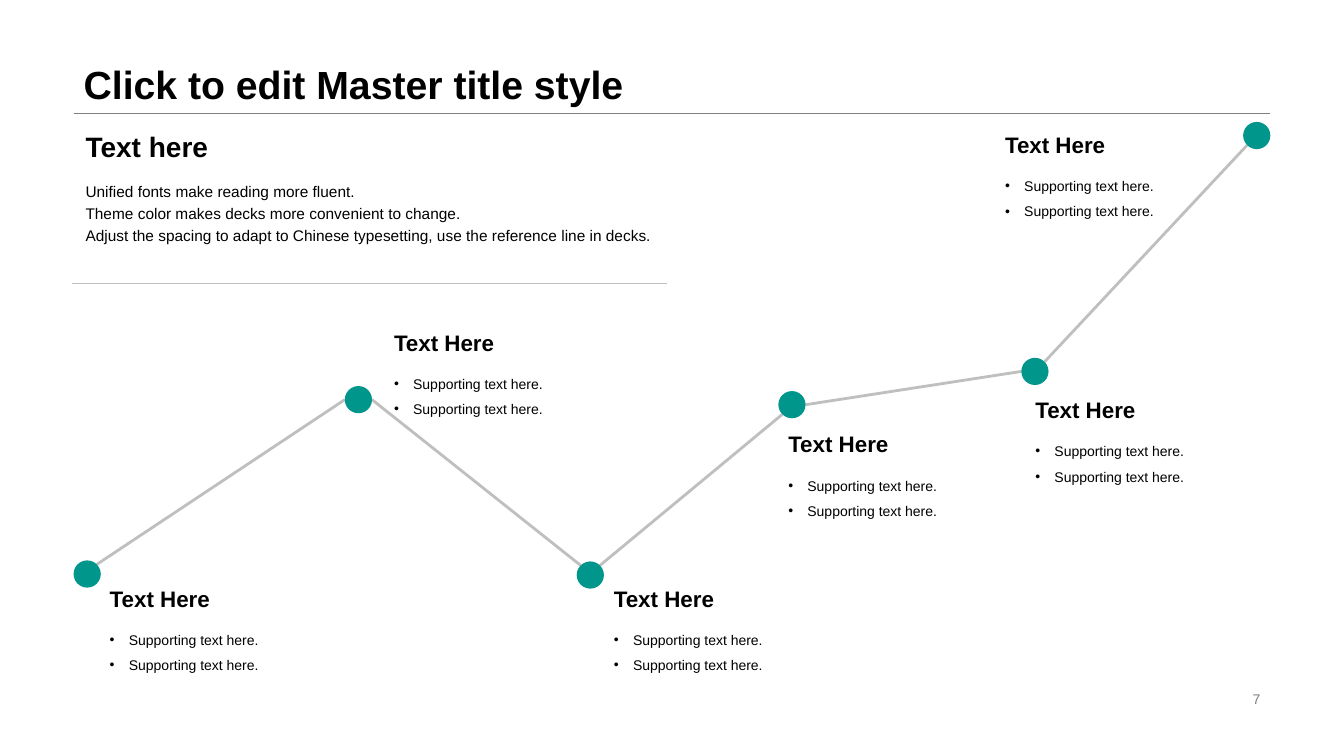
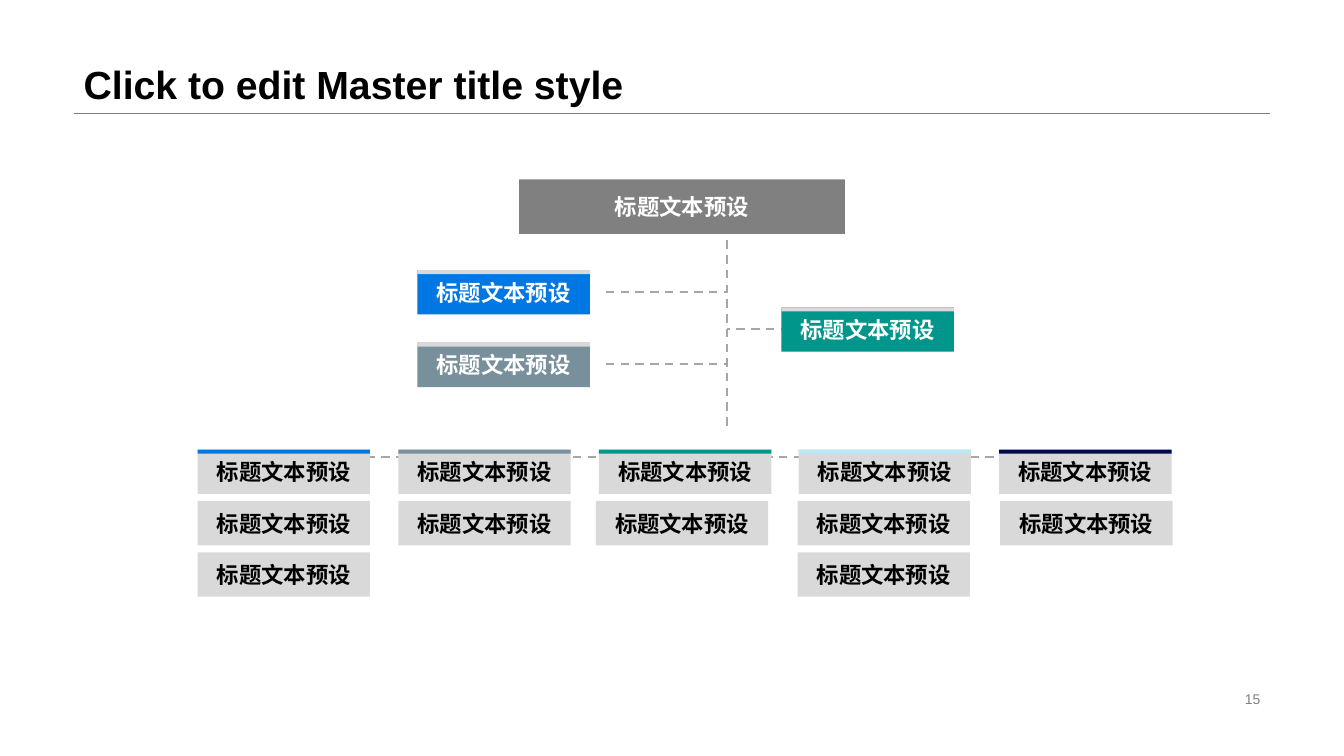
from math import sqrt

from lxml import etree
from pptx import Presentation
from pptx import util as u
from pptx.dml.color import RGBColor
from pptx.enum import dml, shapes, text
from pptx.oxml import ns

EMU_PER_PX = 9144  # 100 px to the inch
FONT = "Arial"
COLORS = {
    "black": "000000", "white": "FFFFFF", "gray": "808080",
    "dash": "A6A6A6", "rule": "BFBFBF", "panel": "D9D9D9",
    "blue": "0077E2", "slate": "78909C", "teal": "00968C",
    "sky": "B9E8F6", "navy": "000A4C",
}
LEFT, RIGHT, CENTER = text.PP_ALIGN.LEFT, text.PP_ALIGN.RIGHT, text.PP_ALIGN.CENTER
TOP, MIDDLE, BOTTOM = text.MSO_ANCHOR.TOP, text.MSO_ANCHOR.MIDDLE, text.MSO_ANCHOR.BOTTOM

MARGIN, CONTENT_WIDTH = 73, 1187
TITLE = "Click to edit Master title style"

DOT_SIZE = 27
# Dot and label offsets within the trend region
MILESTONES = [
    ((0, 435), (26, 453)),
    ((269, 262), (308, 199)),
    ((499, 436), (526, 453)),
    ((699, 267), (699, 300)),
    ((940, 234), (944, 266)),
    ((1160, 0), (914, 3)),
]
# Sides of the dots at which each trend line starts and ends
TREND_ENDS = [
    ("top right", "left"),
    ("right", "top left"),
    ("top right", "bottom left"),
    ("right", "left"),
    ("top right", "bottom left"),
]

UNIT = "标题文本预设"
UNIT_WIDTH, UNIT_HEIGHT, ACCENT_HEIGHT = 171, 44, 4
# Accent colour, number of lower units, their sideways shift
BRANCHES = [
    ("blue", 2, 0), ("slate", 1, 0), ("teal", 1, -3), ("sky", 2, -1), ("navy", 1, 1),
]


def px(length):
    return u.Emu(round(length * EMU_PER_PX))


def rgb(color):
    return RGBColor.from_string(COLORS[color])


def write(frame, lines, size, color="black", bold=False, align=LEFT,
          anchor=TOP, spacing=1.0):
    frame.word_wrap = True
    frame.auto_size = text.MSO_AUTO_SIZE.NONE
    frame.vertical_anchor = anchor
    frame.text = "\n".join(lines)
    for para in frame.paragraphs:
        para.alignment = align
        para.line_spacing = spacing
        for span in para.runs:
            span.font.name = FONT
            span.font.size = u.Pt(size)
            span.font.bold = bold
            span.font.color.rgb = rgb(color)


def add_text(page, left, top, width, height, lines, size, **style):
    box = page.shapes.add_textbox(px(left), px(top), px(width), px(height))
    write(box.text_frame, lines, size, **style)
    return box


def add_bullets(frame, indent):
    for para in frame.paragraphs:
        properties = para._p.get_or_add_pPr()
        properties.set("marL", str(px(indent)))
        properties.set("indent", str(-px(indent)))
        etree.SubElement(properties, ns.qn("a:buFont")).set("typeface", FONT)
        etree.SubElement(properties, ns.qn("a:buChar")).set("char", "•")


def add_filled(page, kind, left, top, width, height, color):
    shape = page.shapes.add_shape(kind, px(left), px(top), px(width), px(height))
    shape.shadow.inherit = False
    shape.fill.solid()
    shape.fill.fore_color.rgb = rgb(color)
    shape.line.fill.background()
    return shape


def add_line(page, start, end, color, weight, dashed=False):
    line = page.shapes.add_connector(
        shapes.MSO_CONNECTOR.STRAIGHT, *(px(value) for value in (*start, *end)))
    line.line.color.rgb = rgb(color)
    line.line.width = u.Pt(weight)
    if dashed:
        line.line.dash_style = dml.MSO_LINE.DASH
    etree.SubElement(line._element.spPr, ns.qn("a:effectLst"))


def add_page(deck, number):
    """Add a slide with the shared title, rule and page number."""
    page = deck.slides.add_slide(deck.slide_layouts[5])
    title = page.shapes.title
    title.left, title.top = px(MARGIN), px(0)
    title.width, title.height = px(CONTENT_WIDTH), px(112)
    write(title.text_frame, [TITLE], 28, bold=True, anchor=BOTTOM, spacing=0.9)
    right = MARGIN + CONTENT_WIDTH
    add_line(page, (MARGIN, 112), (right, 112), "gray", 0.25)
    add_text(page, right - 318, 682, 318, 23, [str(number)], 10,
             color="gray", align=RIGHT, anchor=MIDDLE)
    return page


def add_intro(page, left, top, width):
    add_text(page, left, top, width, 48, ["Text here"], 20, bold=True)
    add_text(page, left, top + 48, width, 95, [
        "Unified fonts make reading more fluent.",
        "Theme color makes decks more convenient to change.",
        "Adjust the spacing to adapt to Chinese typesetting, "
        "use the reference line in decks.",
    ], 11, spacing=1.2)
    add_line(page, (left - 4, top + 157), (left + 587, top + 157), "rule", 0.25)


def add_milestone_label(page, left, top):
    add_text(page, left, top, 234, 39, ["Text Here"], 16, bold=True, anchor=MIDDLE)
    details = add_text(page, left, top + 39, 234, 72,
                       ["Supporting text here."] * 2, 10, spacing=1.5)
    add_bullets(details.text_frame, 19)


def dot_edge(left, top, side):
    """Return the point of a dot's outline that lies on the named side."""
    across = ("right" in side) - ("left" in side)
    down = ("bottom" in side) - ("top" in side)
    radius = DOT_SIZE / 2
    reach = radius / sqrt(abs(across) + abs(down))
    return left + radius + across * reach, top + radius + down * reach


def add_trend(page, left, top):
    dots = [(left + x, top + y) for (x, y), _ in MILESTONES]
    for start, end, (start_side, end_side) in zip(dots, dots[1:], TREND_ENDS):
        add_line(page, dot_edge(*start, start_side), dot_edge(*end, end_side),
                 "rule", 2)
    for dot in dots:
        add_filled(page, shapes.MSO_SHAPE.OVAL, *dot, DOT_SIZE, DOT_SIZE, "teal")
    for _, (x, y) in MILESTONES:
        add_milestone_label(page, left + x, top + y)


def add_unit(page, left, top, fill="panel", color="black", accent=None,
             width=UNIT_WIDTH, height=UNIT_HEIGHT):
    kind = shapes.MSO_SHAPE.RECTANGLE
    box = add_filled(page, kind, left, top, width, height, fill)
    write(box.text_frame, [UNIT], 16, color=color, bold=True,
          align=CENTER, anchor=MIDDLE)
    if accent:
        add_filled(page, kind, left, top, width, ACCENT_HEIGHT, accent)


def add_head_office(page, left, top):
    """Place the top unit, the trunk below it and its three staff units."""
    trunk = left + 307
    add_line(page, (trunk, top + 46), (trunk, top + 250), "dash", 1.5, True)
    for reach, y in ((-120, 112), (-120, 183), (120, 148)):
        add_line(page, (trunk + reach, top + y), (trunk, top + y), "dash", 1.5, True)
    add_unit(page, left + 101, top, "gray", "white", width=323, height=54)
    for x, y, fill in ((0, 90, "blue"), (0, 162, "slate"), (361, 127, "teal")):
        add_unit(page, left + x, top + y, fill, "white", accent="panel")


def add_branches(page, left, top):
    """Place the linked columns of units, each with a coloured first unit."""
    bus, drop = top + 7, left + 80
    add_line(page, (drop, bus), (drop + 802, bus), "dash", 1.5, True)
    for index in range(len(BRANCHES)):
        x = drop + 200 * index
        add_line(page, (x, bus), (x, bus + 70), "dash", 1.5, True)
    for index, (accent, count, shift) in enumerate(BRANCHES):
        x = left + round(198.75 * index)
        add_unit(page, x, top, accent=accent)
        for row in range(1, count + 1):
            add_unit(page, x + shift, top + 51 * row)


def build_trend_page(deck):
    page = add_page(deck, 7)
    add_trend(page, MARGIN, 121)
    add_intro(page, 75, 124, 630)


def build_organisation_page(deck):
    page = add_page(deck, 15)
    add_branches(page, 196, 446)
    add_head_office(page, 414, 178)


def main():
    deck = Presentation()
    deck.slide_width, deck.slide_height = px(1333), px(750)
    build_trend_page(deck)
    build_organisation_page(deck)
    deck.save("out.pptx")


if __name__ == "__main__":
    main()
